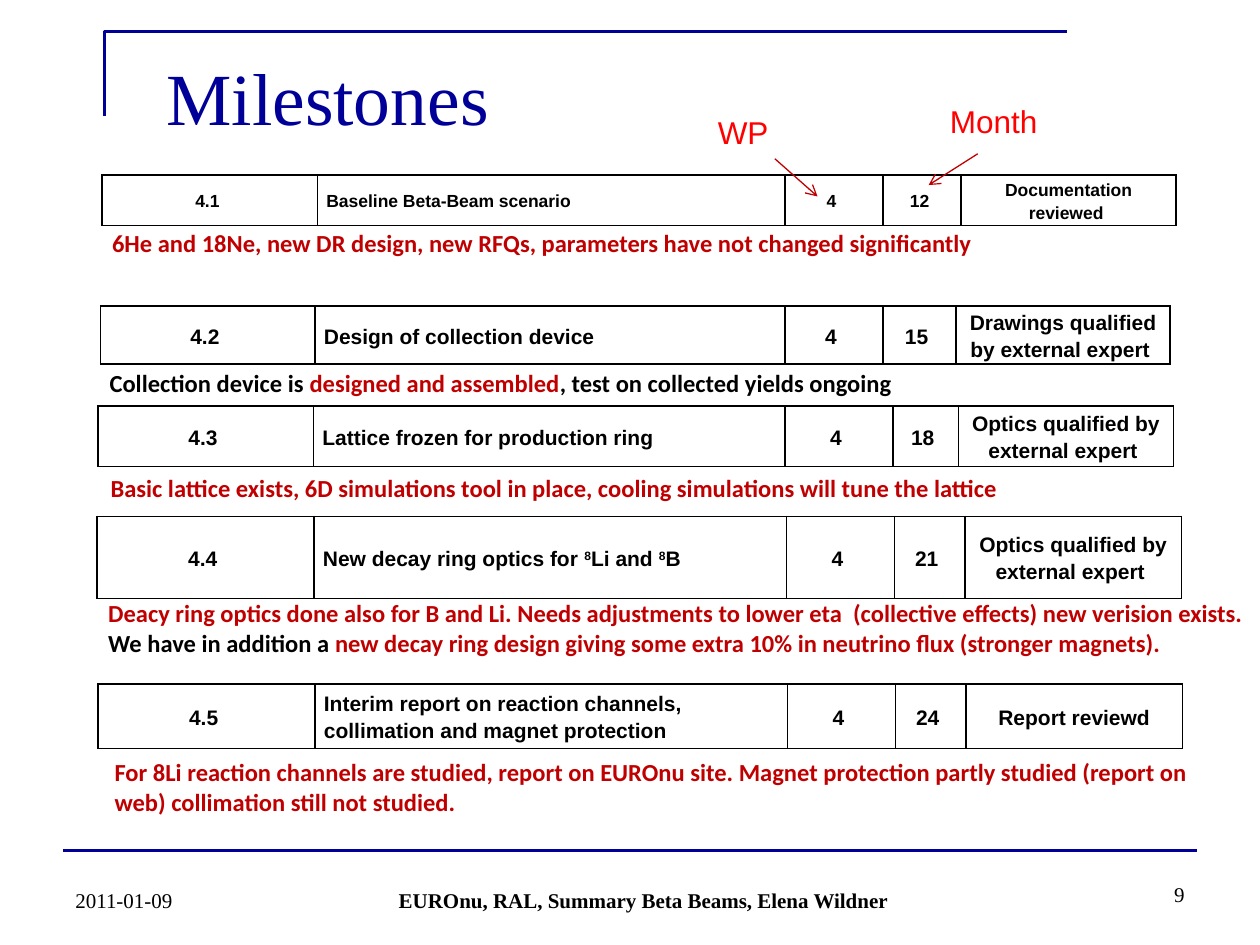
from typing import NamedTuple

from lxml.etree import SubElement
from pptx import Presentation
from pptx.dml.color import RGBColor
from pptx.enum.shapes import MSO_CONNECTOR
from pptx.enum.text import MSO_ANCHOR as Anchor
from pptx.enum.text import MSO_AUTO_SIZE as AutoSize
from pptx.enum.text import PP_ALIGN as Align
from pptx.oxml import parse_xml
from pptx.oxml.ns import nsdecls, qn
from pptx.util import Cm, Pt

NAVY = RGBColor(0x00, 0x00, 0x99)
BLACK = RGBColor(0x00, 0x00, 0x00)
DARK_RED = RGBColor(0xC0, 0x00, 0x00)
RED = RGBColor(0xFF, 0x00, 0x00)

SERIF = "Times New Roman"
SANS = "Arial"
NOTE_FONT = "Calibri"


class Run(NamedTuple):
    text: str
    color: RGBColor = BLACK
    raised: bool = False


WIDE_COLUMNS = (4.37, 9.52, 2.18, 1.42, 4.37)

MILESTONES = [
    (2.06, 3.53, 1.02, (4.34, 9.42, 1.98, 1.57, 4.34), 10,
     ["4.1 ", "Baseline Beta-Beam scenario", "4 ", "12 ", "Documentation reviewed "]),
    (2.03, 6.17, 1.17, (4.32, 9.47, 1.98, 1.47, 4.32), 12,
     ["4.2 ", "Design of collection device", "4 ", "15 ",
      "Drawings qualified by external expert "]),
    (1.98, 8.18, 1.22, (4.34, 9.5, 2.18, 1.32, 4.34), 12,
     ["4.3 ", "Lattice frozen for production ring", "4 ", "18 ",
      "Optics qualified by external expert "]),
    (1.96, 10.41, 1.65, WIDE_COLUMNS, 12,
     ["4.4 ",
      [Run("New decay ring optics for "), Run("8", raised=True), Run("Li and "),
       Run("8", raised=True), Run("B")],
      "4 ", "21 ", "Optics qualified by external expert "]),
    (1.98, 13.79, 1.3, WIDE_COLUMNS, 12,
     ["4.5 ", "Interim report on reaction channels, collimation and magnet protection",
      "4 ", "24 ", "Report reviewd"]),
]

NOTES = [
    (2.01, 4.47, 23.39, 0.86,
     [Run("6He and 18Ne, new DR design, new RFQs, parameters have not changed significantly",
          DARK_RED)]),
    (1.96, 7.29, 22.3, 0.86,
     [Run("Collection device is "), Run("designed and assembled", DARK_RED),
      Run(", test on collected yields ongoing")]),
    (1.98, 9.42, 22.66, 0.86,
     [Run("Basic lattice exists, 6D simulations tool in place, cooling simulations "
          "will tune the lattice", DARK_RED)]),
    (1.93, 11.94, 23.47, 1.45,
     [Run("Deacy ring optics done also for B and Li. Needs adjustments to lower eta  "
          "(collective effects) new verision exists. ", DARK_RED),
      Run("We have in addition a "),
      Run("new decay ring design giving some extra 10% in neutrino flux "
          "(stronger magnets).", DARK_RED)]),
    (2.06, 15.14, 22.81, 1.45,
     [Run("For 8Li reaction channels are studied, report on EUROnu site. Magnet protection "
          "partly studied (report on web) collimation still not studied.", DARK_RED)]),
]


def write_runs(paragraph, runs, font_name, size, bold=False):
    for text, color, raised in runs:
        run = paragraph.add_run()
        run.text = text
        run.font.name = font_name
        run.font.size = Pt(size)
        run.font.bold = bold
        run.font.color.rgb = color
        if raised:
            run.font._element.set("baseline", "30000")


def add_title(slide, text):
    title = slide.shapes.title
    title.left, title.top, title.width, title.height = Cm(3.1), Cm(0.76), Cm(19.61), Cm(3.18)
    frame = title.text_frame
    frame.auto_size = AutoSize.NONE
    frame.vertical_anchor = Anchor.TOP
    frame.margin_top = Cm(0.28)
    paragraph = frame.paragraphs[0]
    paragraph.alignment = Align.LEFT
    write_runs(paragraph, [Run(text, NAVY)], SERIF, 42)


def add_text(slide, left, top, width, height, runs, font_name, size, bold=False,
             align=Align.LEFT, anchor=Anchor.TOP, wrap=True, grow=True):
    box = slide.shapes.add_textbox(Cm(left), Cm(top), Cm(width), Cm(height))
    frame = box.text_frame
    frame.word_wrap = wrap
    frame.auto_size = AutoSize.SHAPE_TO_FIT_TEXT if grow else AutoSize.NONE
    frame.vertical_anchor = anchor
    paragraph = frame.paragraphs[0]
    paragraph.alignment = align
    write_runs(paragraph, runs, font_name, size, bold)


def add_line(slide, start, end, color, width, arrow=False):
    line = slide.shapes.add_connector(
        MSO_CONNECTOR.STRAIGHT, *(Cm(value) for value in start + end))
    line.line.color.rgb = color
    line.line.width = Pt(width)
    if arrow:
        SubElement(line.line._get_or_add_ln(), qn("a:tailEnd"), type="arrow")
    SubElement(line._element.spPr, qn("a:effectLst"))


def add_corner(slide):
    builder = slide.shapes.build_freeform(Cm(2.11), Cm(2.34))
    builder.add_line_segments([(Cm(2.11), Cm(0.64)), (Cm(21.51), Cm(0.64))], close=False)
    corner = builder.convert_to_shape()
    corner.shadow.inherit = False
    corner.fill.background()
    corner.line.color.rgb = NAVY
    corner.line.width = Pt(1.5)


def add_borders(cell):
    properties = cell._tc.get_or_add_tcPr()
    for index, side in enumerate(("lnL", "lnR", "lnT", "lnB")):
        properties.insert(index, parse_xml(
            f'<a:{side} {nsdecls("a")} w="12700"><a:solidFill>'
            f'<a:srgbClr val="{BLACK}"/></a:solidFill></a:{side}>'))


def add_milestone(slide, left, top, height, columns, size, contents):
    table = slide.shapes.add_table(
        1, len(columns), Cm(left), Cm(top), Cm(sum(columns)), Cm(height)).table
    table.first_row = False
    table.horz_banding = False
    for index, (width, content) in enumerate(zip(columns, contents)):
        table.columns[index].width = Cm(width)
        cell = table.cell(0, index)
        cell.fill.background()
        add_borders(cell)
        cell.vertical_anchor = Anchor.MIDDLE
        cell.margin_left = cell.margin_right = Cm(0.18)
        cell.margin_top = cell.margin_bottom = Cm(0)
        paragraph = cell.text_frame.paragraphs[0]
        paragraph.alignment = Align.LEFT if index == 1 else Align.CENTER
        paragraph.line_spacing = 1.15
        runs = [Run(content)] if isinstance(content, str) else content
        write_runs(paragraph, runs, SANS, size, bold=True)


def add_footer(slide, left, top, width, height, text, align, bold=False):
    add_text(slide, left, top, width, height, [Run(text)], SERIF, 12, bold,
             align, Anchor.BOTTOM, grow=False)


def add_callout(slide, left, top, width, text, start, end):
    add_text(slide, left, top, width, 1.02, [Run(text, RED)], SANS, 18, wrap=False)
    add_line(slide, start, end, DARK_RED, 0.75, arrow=True)


def main():
    presentation = Presentation()
    presentation.slide_width = Cm(25.4)
    presentation.slide_height = Cm(19.05)
    slide = presentation.slides.add_slide(presentation.slide_layouts[5])

    add_corner(slide)
    add_line(slide, (1.27, 17.14), (24.13, 17.14), NAVY, 1.5)
    add_title(slide, "Milestones")
    add_footer(slide, 1.27, 17.25, 5.92, 1.27, "2011-01-09", Align.LEFT)
    add_footer(slide, 18.21, 17.14, 5.92, 1.27, "9", Align.RIGHT)
    add_footer(slide, 6.88, 17.83, 12.19, 0.69,
               "EUROnu, RAL, Summary Beta Beams, Elena Wildner", Align.CENTER, bold=True)

    for milestone in MILESTONES:
        add_milestone(slide, *milestone)
    for note in NOTES:
        add_text(slide, *note, NOTE_FONT, 14, bold=True)
    add_callout(slide, 14.22, 2.16, 1.55, "WP", (15.62, 3.2), (16.48, 3.96))
    add_callout(slide, 18.9, 1.93, 2.29, "Month", (19.71, 3.1), (18.72, 3.73))

    presentation.save("out.pptx")


if __name__ == "__main__":
    main()
